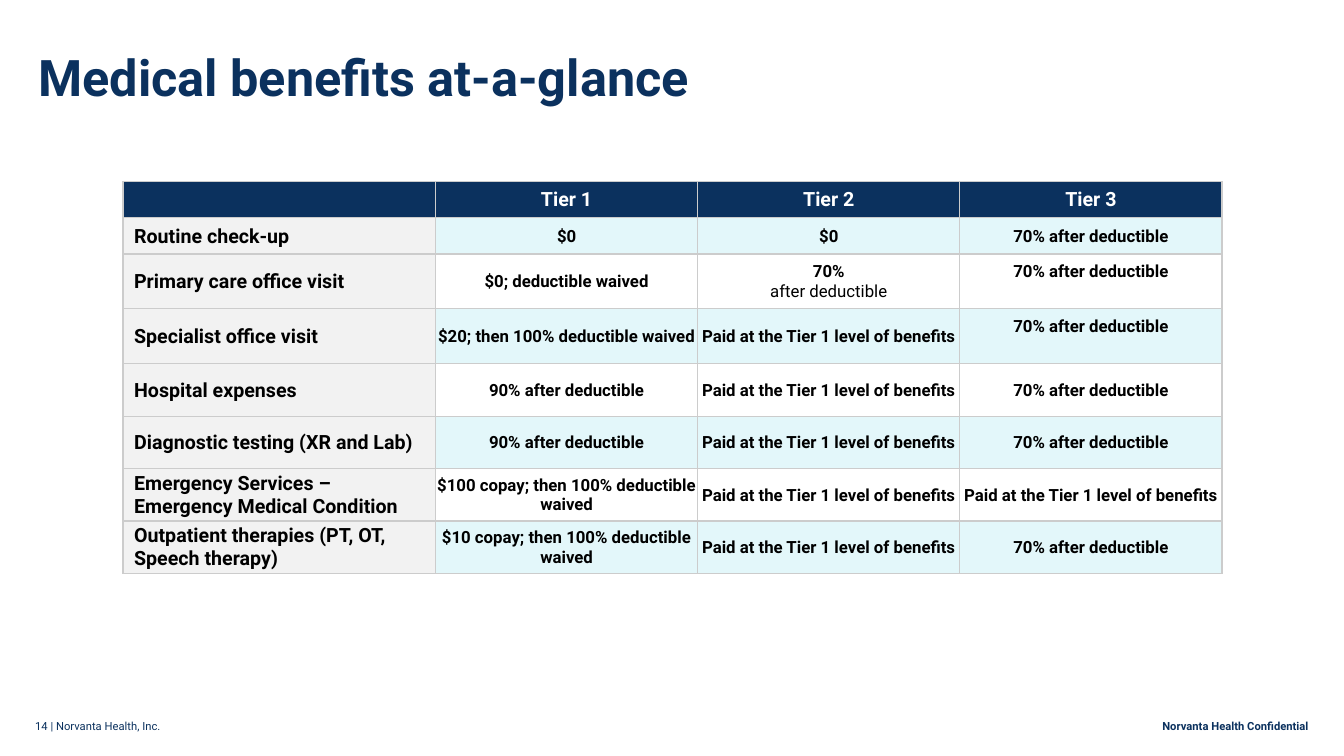
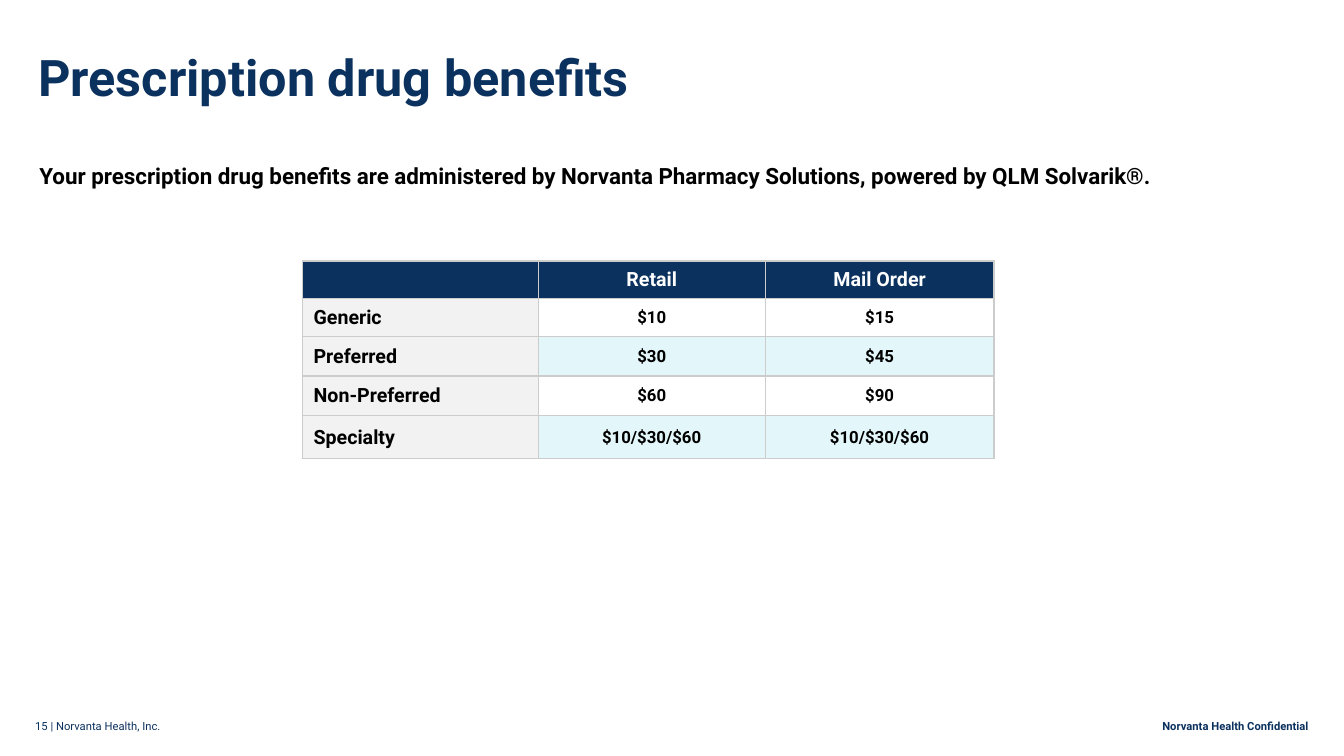
from lxml import etree
from pptx import Presentation
from pptx.dml.color import RGBColor
from pptx.enum.text import MSO_ANCHOR, MSO_AUTO_SIZE, PP_ALIGN
from pptx.oxml.ns import qn
from pptx.util import Inches, Pt

FONT = "Roboto"
NAVY = RGBColor(0x0B, 0x31, 0x5E)
BLACK = RGBColor(0x00, 0x00, 0x00)
WHITE = RGBColor(0xFF, 0xFF, 0xFF)
LABEL_GRAY = RGBColor(0xF2, 0xF2, 0xF2)
BAND_BLUE = RGBColor(0x77, 0xD8, 0xE8)
BORDER_GRAY = RGBColor(0xCC, 0xCC, 0xCC)
BAND_OPACITY = 20000  # thousandths of a percent
LEFT, CENTER, RIGHT = PP_ALIGN.LEFT, PP_ALIGN.CENTER, PP_ALIGN.RIGHT
TOP, MIDDLE = MSO_ANCHOR.TOP, MSO_ANCHOR.MIDDLE
NO_AUTOFIT = MSO_AUTO_SIZE.NONE
TITLE_AND_BODY, TITLE_ONLY = 1, 5
FIRST_PAGE = 14

# Content
COMPANY = "Norvanta Health, Inc."
CONFIDENTIAL = "Norvanta Health Confidential"
AFTER_70 = "70% after deductible"
AFTER_90 = "90% after deductible"
AS_TIER_1 = "Paid at the Tier 1 level of benefits"

SLIDES = [
    {
        "title": "Medical benefits at-a-glance",
        "table": {
            "left": 1.22, "top": 1.8,
            "widths": [3.1, 2.6, 2.6, 2.6],
            "heights": [0.36, 0.36, 0.54, 0.55, 0.52, 0.52, 0.52, 0.52],
            "first_band": 1,
            "raised": {(2, 3), (3, 3)},
            "rows": [
                ["", "Tier 1", "Tier 2", "Tier 3"],
                ["Routine check-up", "$0", "$0", AFTER_70],
                ["Primary care office visit", "$0; deductible waived",
                 "70%\nafter deductible", AFTER_70],
                ["Specialist office visit", "$20; then 100% deductible waived",
                 AS_TIER_1, AFTER_70],
                ["Hospital expenses", AFTER_90, AS_TIER_1, AFTER_70],
                ["Diagnostic testing (XR and Lab)", AFTER_90, AS_TIER_1, AFTER_70],
                ["Emergency Services – Emergency Medical Condition",
                 "$100 copay; then 100% deductible waived", AS_TIER_1, AS_TIER_1],
                ["Outpatient therapies (PT, OT, Speech therapy)",
                 "$10 copay; then 100% deductible waived", AS_TIER_1, AFTER_70],
            ],
        },
    },
    {
        "title": "Prescription drug benefits",
        "body": "Your prescription drug benefits are administered by "
                "Norvanta Pharmacy Solutions, powered by QLM Solvarik®.",
        "table": {
            "left": 3, "top": 2.59,
            "widths": [2.34, 2.25, 2.27],
            "heights": [0.37, 0.38, 0.39, 0.39, 0.43],
            "first_band": 2,
            "raised": set(),
            "rows": [
                ["", "Retail", "Mail Order"],
                ["Generic", "$10", "$15"],
                ["Preferred", "$30", "$45"],
                ["Non-Preferred", "$60", "$90"],
                ["Specialty", "$10/$30/$60", "$10/$30/$60"],
            ],
        },
    },
]


# Text and placement helpers
def write(paragraph, text, size, color, bold=True, align=LEFT):
    paragraph.alignment = align
    run = paragraph.add_run()
    run.text = text
    run.font.name = FONT
    run.font.size = Pt(size)
    run.font.bold = bold
    run.font.color.rgb = color


def place(shape, left, top, width, height):
    shape.left, shape.top = Inches(left), Inches(top)
    shape.width, shape.height = Inches(width), Inches(height)


def set_margins(target, left, top, right, bottom):
    target.margin_left, target.margin_top = Inches(left), Inches(top)
    target.margin_right, target.margin_bottom = Inches(right), Inches(bottom)


# Parts every slide shares
def add_title(slide, text):
    title = slide.shapes.title
    place(title, 0.38, 0.53, 12.84, 0.46)
    frame = title.text_frame
    frame.auto_size = NO_AUTOFIT
    frame.vertical_anchor = TOP
    set_margins(frame, 0, 0, 0, 0)
    frame.paragraphs[0].line_spacing = 0.9
    write(frame.paragraphs[0], text, 36, NAVY)


def add_footer(slide, page):
    footers = [
        (0.25, 10.35, f"{page} | {COMPANY}", False, LEFT),
        (11.02, 2.06, CONFIDENTIAL, True, RIGHT),
    ]
    for left, width, text, bold, align in footers:
        box = slide.shapes.add_textbox(
            Inches(left), Inches(7.09), Inches(width), Inches(0.24))
        box.text_frame.word_wrap = True
        write(box.text_frame.paragraphs[0], text, 8, NAVY, bold, align)


def add_body(slide, text):
    body = slide.placeholders[1]
    place(body, 0.29, 1.56, 12.28, 0.46)
    frame = body.text_frame
    frame.auto_size = NO_AUTOFIT
    frame.vertical_anchor = TOP
    paragraph = frame.paragraphs[0]
    properties = paragraph._p.get_or_add_pPr()
    properties.set("marL", "0")
    properties.set("indent", "0")
    etree.SubElement(properties, qn("a:buNone"))
    paragraph.space_before = Pt(0)
    write(paragraph, text, 16, BLACK)


# Tables
def add_borders(cell):
    properties = cell._tc.get_or_add_tcPr()
    for side in ("a:lnL", "a:lnR", "a:lnT", "a:lnB"):
        line = etree.SubElement(properties, qn(side), w=str(Pt(1)))
        fill = etree.SubElement(line, qn("a:solidFill"))
        etree.SubElement(fill, qn("a:srgbClr"), val=str(BORDER_GRAY))


def fill_cell(cell, color, opacity=None):
    cell.fill.solid()
    cell.fill.fore_color.rgb = color
    if opacity:
        color_element = cell._tc.tcPr.find(f"{qn('a:solidFill')}/{qn('a:srgbClr')}")
        etree.SubElement(color_element, qn("a:alpha"), val=str(opacity))


def format_cell(cell, row, column, text, first_band, raised):
    is_header, is_label = row == 0, column == 0
    is_band = row >= first_band and (row - first_band) % 2 == 0
    cell.vertical_anchor = MIDDLE
    set_margins(cell, 0.11 if is_label else 0.01, 0.01, 0.01, 0.2 if raised else 0)
    add_borders(cell)
    if is_header:
        fill_cell(cell, NAVY)
    elif is_label:
        fill_cell(cell, LABEL_GRAY)
    elif is_band:
        fill_cell(cell, BAND_BLUE, BAND_OPACITY)
    else:
        fill_cell(cell, WHITE)
    if not text:
        return
    frame = cell.text_frame
    for index, line in enumerate(text.split("\n")):
        paragraph = frame.add_paragraph() if index else frame.paragraphs[0]
        write(paragraph, line, 14 if is_header or is_label else 12,
              WHITE if is_header else BLACK, index == 0,
              LEFT if is_label else CENTER)


def add_benefits_table(slide, data):
    widths, heights, rows = data["widths"], data["heights"], data["rows"]
    table = slide.shapes.add_table(
        len(heights), len(widths), Inches(data["left"]), Inches(data["top"]),
        Inches(sum(widths)), Inches(sum(heights))).table
    for column, width in zip(table.columns, widths):
        column.width = Inches(width)
    for table_row, height in zip(table.rows, heights):
        table_row.height = Inches(height)
    for row, texts in enumerate(rows):
        for column, text in enumerate(texts):
            format_cell(table.cell(row, column), row, column, text,
                        data["first_band"], (row, column) in data["raised"])


def main():
    presentation = Presentation()
    presentation.slide_width = Inches(13.33)
    presentation.slide_height = Inches(7.5)
    for page, content in enumerate(SLIDES, FIRST_PAGE):
        layout = TITLE_AND_BODY if "body" in content else TITLE_ONLY
        slide = presentation.slides.add_slide(presentation.slide_layouts[layout])
        add_title(slide, content["title"])
        if "body" in content:
            add_body(slide, content["body"])
        add_benefits_table(slide, content["table"])
        add_footer(slide, page)
    presentation.save("out.pptx")


if __name__ == "__main__":
    main()
